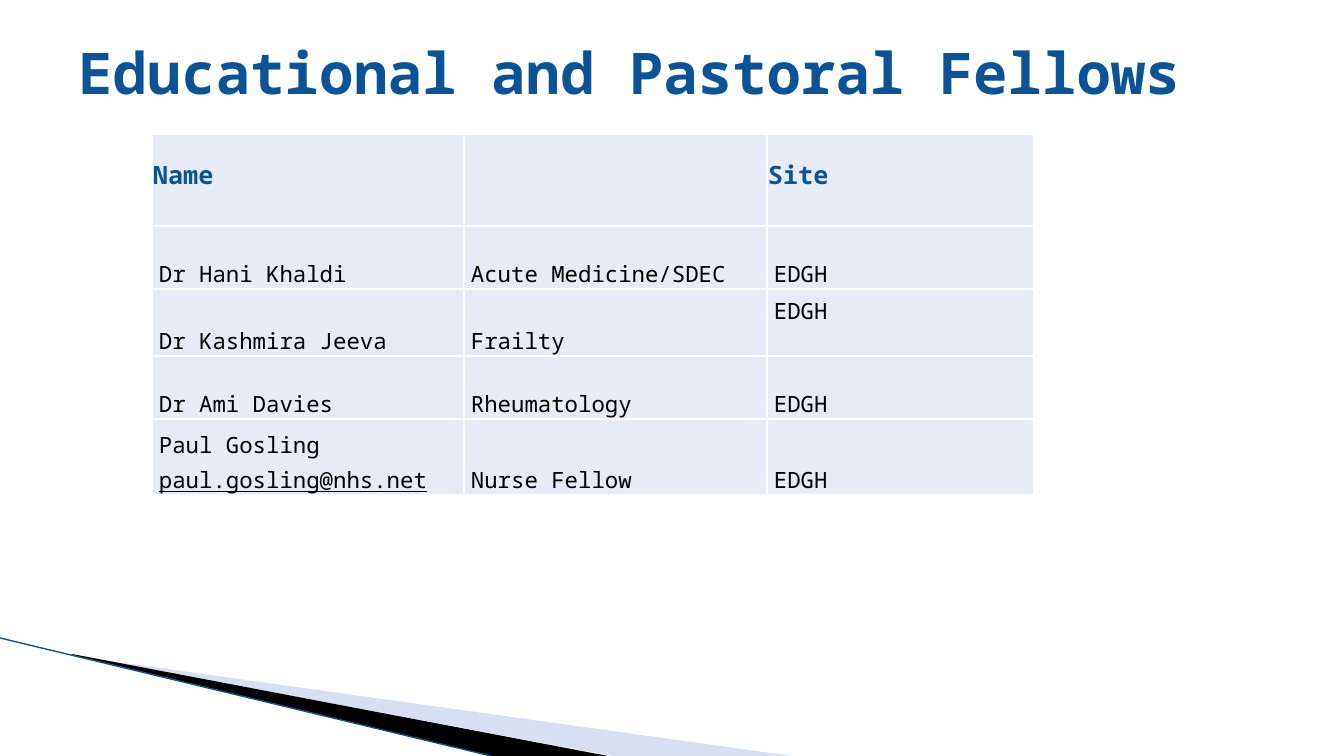
from dataclasses import dataclass

from lxml import etree
from pptx import Presentation
from pptx.dml.color import RGBColor
from pptx.enum.shapes import MSO_CONNECTOR
from pptx.enum.text import MSO_ANCHOR, MSO_AUTO_SIZE, PP_ALIGN
from pptx.oxml.ns import qn
from pptx.util import Pt

LEFT = PP_ALIGN.LEFT
MIDDLE, BOTTOM = MSO_ANCHOR.MIDDLE, MSO_ANCHOR.BOTTOM
NO_FIT = MSO_AUTO_SIZE.NONE
STRAIGHT = MSO_CONNECTOR.STRAIGHT


@dataclass(frozen=True)
class Theme:
    font: str = "Noto Sans Mono"
    blue: str = "0B5394"
    black: str = "000000"
    white: str = "FFFFFF"
    cell: str = "E7EBF5"
    pale: str = "9DB2E1"
    title_pt: int = 41
    head_pt: int = 18
    body_pt: int = 16
    border_pt: int = 1
    swoosh_pt: float = 0.95


T = Theme()
TITLE = "Educational and Pastoral Fellows"
HEAD = ["Name", "", "Site"]
FELLOWS = [
    ["Dr Hani Khaldi", "Acute Medicine/SDEC", "EDGH"],
    ["Dr Kashmira Jeeva", "Frailty", "EDGH"],
    ["Dr Ami Davies", "Rheumatology", "EDGH"],
    [("Paul Gosling ", "paul.gosling@nhs.net"), "Nurse Fellow", "EDGH"],
]
SLIDE = (1344, 756)
TITLE_BOX = (68, 9, 1210, 126)
TABLE_AT = (152, 134)
COLS = [312, 303, 267]
ROWS = [92, 63, 67, 63, 76]
HEAD_LIFT = 34
LIFTS = {(2, 2): 30}
LAST_SPACING = 1.15
WEDGES = [
    ([(74, 656), (792, 756), (613, 756), (74, 655)], T.pale, 40),
    ([(72, 654), (608, 756), (492, 756), (73, 655)], T.black, 100),
]
SWOOSH = (0, 638, 491, 756)


def px(n):
    return round(n * 914400 / 100.8)


def rgb(c):
    return RGBColor.from_string(c)


def add_run(p, text, size, color, bold=False, underline=False):
    r = p.add_run()
    r.text = text
    f = r.font
    f.name, f.size, f.bold = T.font, Pt(size), bold
    f.color.rgb = rgb(color)
    if underline:
        f.underline = True


def add_wedge(s, points, color, alpha):
    fb = s.shapes.build_freeform(*points[0], scale=px(100) / 100)
    fb.add_line_segments(points[1:], close=True)
    sp = fb.convert_to_shape()
    sp.shadow.inherit = False
    sp.line.fill.background()
    sp.fill.solid()
    sp.fill.fore_color.rgb = rgb(color)
    if alpha < 100:
        clr = sp.fill._xPr.find(qn("a:solidFill"))[0]
        etree.SubElement(clr, qn("a:alpha"), val=str(alpha * 1000))


def add_swoosh(s):
    cx = s.shapes.add_connector(STRAIGHT, *map(px, SWOOSH))
    cx.line.color.rgb = rgb(T.blue)
    cx.line.width = Pt(T.swoosh_pt)
    etree.SubElement(cx._element.spPr, qn("a:effectLst"))


def style_cell(cell, side, bottom):
    cell.margin_left = cell.margin_right = px(side)
    cell.margin_top, cell.margin_bottom = 0, px(bottom)
    cell.vertical_anchor = BOTTOM
    tcPr = cell._tc.get_or_add_tcPr()
    for edge in ("lnL", "lnR", "lnT", "lnB"):
        ln = etree.SubElement(tcPr, qn(f"a:{edge}"), w=str(Pt(T.border_pt)))
        fill = etree.SubElement(ln, qn("a:solidFill"))
        etree.SubElement(fill, qn("a:srgbClr"), val=T.white)
    cell.fill.solid()
    cell.fill.fore_color.rgb = rgb(T.cell)


def add_fellows(s):
    box = (*TABLE_AT, sum(COLS), sum(ROWS))
    tbl = s.shapes.add_table(len(ROWS), len(COLS), *map(px, box)).table
    tbl.first_row = tbl.horz_banding = False
    for col, w in zip(tbl.columns, COLS):
        col.width = px(w)
    for row, h in zip(tbl.rows, ROWS):
        row.height = px(h)
    for i, values in enumerate([HEAD] + FELLOWS):
        for j, value in enumerate(values):
            cell = tbl.cell(i, j)
            head = i == 0
            style_cell(cell, 1 if head else 7, HEAD_LIFT if head else LIFTS.get((i, j), 0))
            p = cell.text_frame.paragraphs[0]
            if i == len(FELLOWS):
                p.line_spacing = LAST_SPACING
            parts = (value,) if isinstance(value, str) else value
            for k, text in enumerate(parts):
                if head and text:
                    add_run(p, text, T.head_pt, T.blue, bold=True)
                elif text:
                    add_run(p, text, T.body_pt, T.black, underline=k > 0)


def add_title(s):
    sp = s.shapes.title
    sp.left, sp.top, sp.width, sp.height = map(px, TITLE_BOX)
    tf = sp.text_frame
    tf.auto_size, tf.word_wrap = NO_FIT, True
    tf.vertical_anchor = MIDDLE
    p = tf.paragraphs[0]
    p.alignment = LEFT
    add_run(p, TITLE, T.title_pt, T.blue, bold=True)


def main():
    prs = Presentation()
    prs.slide_width, prs.slide_height = map(px, SLIDE)
    s = prs.slides.add_slide(prs.slide_layouts[5])
    for wedge in WEDGES:
        add_wedge(s, *wedge)
    add_swoosh(s)
    add_fellows(s)
    add_title(s)
    prs.save("out.pptx")


if __name__ == "__main__":
    main()
